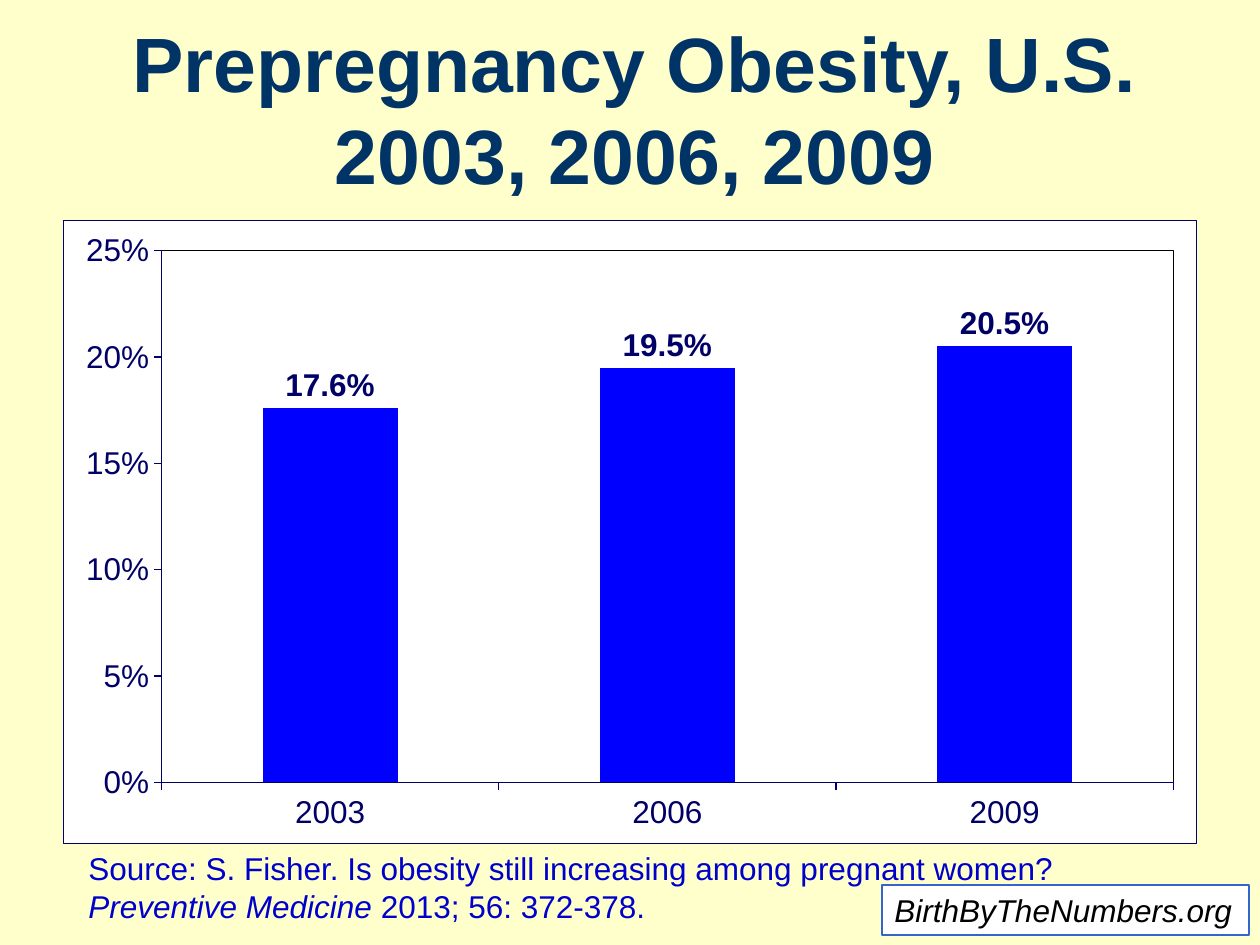
from lxml import etree
from pptx import Presentation
from pptx.chart.data import CategoryChartData
from pptx.dml.color import RGBColor
from pptx.enum.chart import XL_CHART_TYPE, XL_LABEL_POSITION, XL_TICK_MARK
from pptx.enum.shapes import MSO_SHAPE
from pptx.enum.text import MSO_ANCHOR, PP_ALIGN
from pptx.oxml import parse_xml
from pptx.oxml.ns import nsdecls, qn
from pptx.util import Pt

COLUMNS = XL_CHART_TYPE.COLUMN_CLUSTERED
OUTSIDE_END = XL_LABEL_POSITION.OUTSIDE_END
TICK_OUT, TICK_NONE = XL_TICK_MARK.OUTSIDE, XL_TICK_MARK.NONE
RECTANGLE = MSO_SHAPE.RECTANGLE
MIDDLE = MSO_ANCHOR.MIDDLE
LEFT, CENTER = PP_ALIGN.LEFT, PP_ALIGN.CENTER

THEME = {
    "font": "Arial", "title_size": 44, "body_size": 18, "line_width": 0.75,
    "page": "FFFFCC", "panel": "FFFFFF", "title": "003366", "chart": "000066",
    "bar": "0000FF", "source": "0000CC", "site": "000000",
    "site_line": "3366CC", "plot_line": "000000",
}
SCALE = 914400 / 126


def px(*lengths):
    return [round(length * SCALE) for length in lengths]


def style(font, size, color, bold=False, italic=False):
    font.name = THEME["font"]
    font.size = Pt(THEME[size])
    font.color.rgb = RGBColor.from_string(THEME[color])
    font.bold = bold
    font.italic = italic


# Page
deck = Presentation()
deck.slide_width, deck.slide_height = px(1260, 945)
page = deck.slides.add_slide(deck.slide_layouts[6])
page.background.fill.solid()
page.background.fill.fore_color.rgb = RGBColor.from_string(THEME["page"])

# Site label
site = page.shapes.add_shape(RECTANGLE, *px(882, 885, 367, 50))
site.shadow.inherit = False
site.fill.solid()
site.fill.fore_color.rgb = RGBColor.from_string(THEME["panel"])
site.line.color.rgb = RGBColor.from_string(THEME["site_line"])
site.line.width = Pt(THEME["line_width"])
site.text_frame.word_wrap = False
site.text_frame.text = "BirthByTheNumbers.org"
para = site.text_frame.paragraphs[0]
para.alignment = LEFT
style(para.runs[0].font, "body_size", "site", italic=True)

# Title
title = page.shapes.add_textbox(*px(63, 21, 1144, 174))
title.text_frame.word_wrap = True
title.text_frame.vertical_anchor = MIDDLE
para = title.text_frame.paragraphs[0]
para.text = "Prepregnancy Obesity, U.S.\v2003, 2006, 2009"
para.alignment = CENTER
for span in para.runs:
    style(span.font, "title_size", "title", bold=True)

# Obesity chart
data = CategoryChartData(number_format="0.0%")
data.categories = ["2003", "2006", "2009"]
data.add_series("Series 1", [0.176, 0.195, 0.205])
chart = page.shapes.add_chart(COLUMNS, *px(63, 220, 1134, 624), data).chart
chart.has_title = False
chart.has_legend = False
style(chart.font, "body_size", "chart")

rates = chart.value_axis
rates.minimum_scale, rates.maximum_scale, rates.major_unit = 0, 0.25, 0.05
rates.has_major_gridlines = False
rates.tick_labels.number_format = "0%"
rates.tick_labels.number_format_is_linked = False
for axis in (rates, chart.category_axis):
    axis.major_tick_mark = TICK_OUT
    axis.minor_tick_mark = TICK_NONE
    axis.format.line.color.rgb = RGBColor.from_string(THEME["chart"])
    axis.format.line.width = Pt(THEME["line_width"])

plot = chart.plots[0]
plot.gap_width = 150
plot.vary_by_categories = False
bars = plot.series[0].format.fill
bars.solid()
bars.fore_color.rgb = RGBColor.from_string(THEME["bar"])
plot.has_data_labels = True
labels = plot.data_labels
labels.show_value = True
labels.number_format = "0.0%"
labels.number_format_is_linked = False
labels.position = OUTSIDE_END
style(labels.font, "body_size", "chart", bold=True)

# Chart panel and plot frame
chart_node = chart.element.find(qn("c:chart"))
plot_area = chart_node.find(qn("c:plotArea"))
panel, frame = [
    parse_xml(
        f'<c:spPr {nsdecls("c", "a")}>'
        f'<a:solidFill><a:srgbClr val="{THEME["panel"]}"/></a:solidFill>'
        f'<a:ln w="{Pt(THEME["line_width"])}"><a:solidFill>'
        f'<a:srgbClr val="{THEME[line]}"/></a:solidFill></a:ln></c:spPr>'
    )
    for line in ("chart", "plot_line")
]
chart_node.addnext(panel)
plot_area.append(frame)

# Plot position inside the chart
for layout in plot_area.findall(qn("c:layout")):
    plot_area.remove(layout)
layout = etree.Element(qn("c:layout"))
manual = etree.SubElement(layout, qn("c:manualLayout"))
settings = {
    "layoutTarget": "inner", "xMode": "edge", "yMode": "edge",
    "x": 98 / 1134, "y": 30 / 624, "w": 1013 / 1134, "h": 533 / 624,
}
for name, value in settings.items():
    etree.SubElement(manual, qn(f"c:{name}")).set("val", str(value))
plot_area.insert(0, layout)

# Source
source = page.shapes.add_textbox(*px(76, 843, 999, 89))
source.text_frame.word_wrap = False
source.text_frame.text = (
    "Source: S. Fisher. Is obesity still increasing among pregnant women?"
)
style(source.text_frame.paragraphs[0].runs[0].font, "body_size", "source")
para = source.text_frame.add_paragraph()
for text, italic in (("Preventive Medicine ", True), ("2013; 56: 372-378.", False)):
    span = para.add_run()
    span.text = text
    style(span.font, "body_size", "source", italic=italic)

deck.save("out.pptx")
